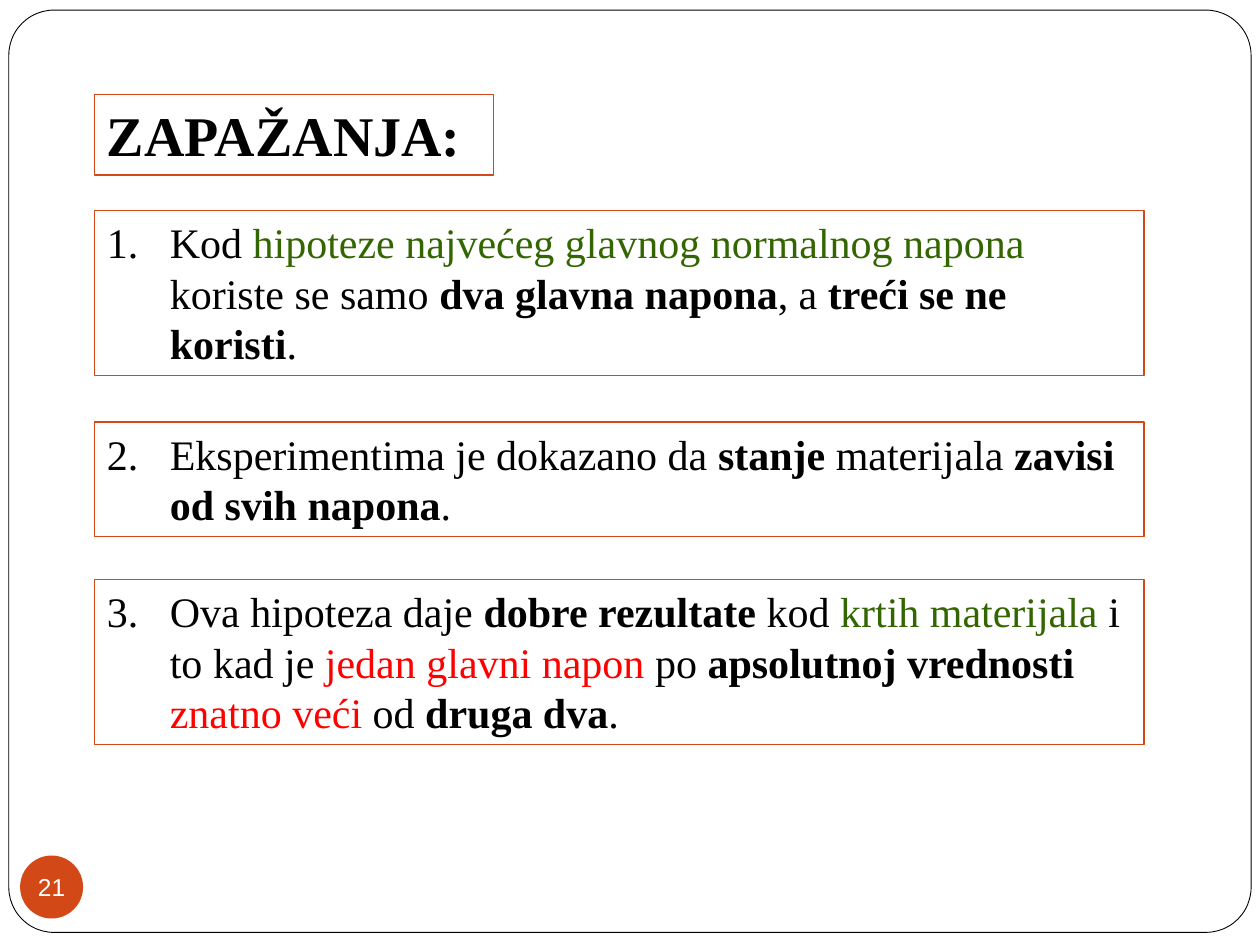
from pptx import Presentation
from pptx.dml.color import RGBColor
from pptx.enum.shapes import MSO_SHAPE
from pptx.enum.text import MSO_ANCHOR, MSO_AUTO_SIZE, PP_ALIGN
from pptx.oxml.ns import qn
from pptx.util import Inches, Pt
from lxml import etree

RECTANGLE, ROUNDED, OVAL = MSO_SHAPE.RECTANGLE, MSO_SHAPE.ROUNDED_RECTANGLE, MSO_SHAPE.OVAL
TOP, MIDDLE = MSO_ANCHOR.TOP, MSO_ANCHOR.MIDDLE
LEFT, CENTER = PP_ALIGN.LEFT, PP_ALIGN.CENTER
FIT_SHAPE = MSO_AUTO_SIZE.SHAPE_TO_FIT_TEXT

BLACK = RGBColor(0x00, 0x00, 0x00)
WHITE = RGBColor(0xFF, 0xFF, 0xFF)
ORANGE = RGBColor(0xD3, 0x48, 0x17)
GREEN = RGBColor(0x33, 0x66, 0x00)
RED = RGBColor(0xFF, 0x00, 0x00)

SERIF = "Times New Roman"
PLAIN = {"color": BLACK, "bold": False}
BOLD = {"color": BLACK, "bold": True}
GREEN_TEXT = {"color": GREEN, "bold": False}
RED_TEXT = {"color": RED, "bold": False}

BOX_LEFT, BOX_WIDTH = 0.75, 8.33
OBSERVATIONS = [
    (1.67, 1.31, [
        ("Kod ", PLAIN),
        ("hipoteze najvećeg glavnog normalnog napona ", GREEN_TEXT),
        ("koriste se samo ", PLAIN),
        ("dva glavna napona", BOLD),
        (", a ", PLAIN),
        ("treći se ne koristi", BOLD),
        (".", PLAIN),
    ]),
    (3.35, 0.91, [
        ("Eksperimentima je dokazano da ", PLAIN),
        ("stanje", BOLD),
        (" materijala ", PLAIN),
        ("zavisi od svih napona", BOLD),
        (".", PLAIN),
    ]),
    (4.6, 1.31, [
        ("Ova hipoteza daje ", PLAIN),
        ("dobre rezultate ", BOLD),
        ("kod ", PLAIN),
        ("krtih materijala ", GREEN_TEXT),
        ("i to kad je ", PLAIN),
        ("jedan glavni napon ", RED_TEXT),
        ("po ", PLAIN),
        ("apsolutnoj vrednosti ", BOLD),
        ("znatno veći ", RED_TEXT),
        ("od ", PLAIN),
        ("druga dva", BOLD),
        (".", PLAIN),
    ]),
]


def add_shape(slide, kind, box, fill=None, line=None, line_width=0.75):
    shape = slide.shapes.add_shape(kind, *(Inches(length) for length in box))
    shape.shadow.inherit = False
    if fill is None:
        shape.fill.background()
    else:
        shape.fill.solid()
        shape.fill.fore_color.rgb = fill
    if line is None:
        shape.line.fill.background()
    else:
        shape.line.color.rgb = line
        shape.line.width = Pt(line_width)
    return shape


def add_runs(paragraph, runs, size, font_name):
    for text, style in runs:
        run = paragraph.add_run()
        run.text = text
        formats = {"name": font_name, "size": Pt(size), "bold": style["bold"]}
        for name, value in formats.items():
            setattr(run.font, name, value)
        run.font.color.rgb = style["color"]


def number_paragraph(paragraph, number):
    """Give the paragraph a hanging automatic number."""
    properties = paragraph._p.get_or_add_pPr()
    indent = Inches(0.5)
    properties.set("marL", str(indent))
    properties.set("indent", str(-indent))
    numbering = etree.SubElement(properties, qn("a:buAutoNum"))
    numbering.set("type", "arabicPeriod")
    if number > 1:
        numbering.set("startAt", str(number))


def add_outlined_text(slide, box, runs, size, number=None):
    shape = add_shape(slide, RECTANGLE, box, line=ORANGE)
    frame = shape.text_frame
    formats = {"word_wrap": True, "vertical_anchor": TOP, "auto_size": FIT_SHAPE}
    for name, value in formats.items():
        setattr(frame, name, value)
    paragraph = frame.paragraphs[0]
    paragraph.alignment = LEFT
    if number is not None:
        number_paragraph(paragraph, number)
    add_runs(paragraph, runs, size, SERIF)


def add_frame(slide, box):
    frame = add_shape(slide, ROUNDED, box, fill=WHITE, line=BLACK, line_width=0.5)
    frame.adjustments[0] = 0.049


def add_page_badge(slide, box, number):
    badge = add_shape(slide, OVAL, box, fill=ORANGE)
    frame = badge.text_frame
    formats = {"margin_left": 0, "margin_top": 0, "margin_right": 0, "margin_bottom": 0,
               "word_wrap": False, "vertical_anchor": MIDDLE}
    for name, value in formats.items():
        setattr(frame, name, value)
    paragraph = frame.paragraphs[0]
    paragraph.alignment = CENTER
    add_runs(paragraph, [(number, {"color": WHITE, "bold": False})], 14, "Arial")


def main():
    presentation = Presentation()
    presentation.slide_width = Inches(10)
    presentation.slide_height = Inches(7.5)
    slide = presentation.slides.add_slide(presentation.slide_layouts[6])

    add_frame(slide, (0.07, 0.08, 9.86, 7.32))
    add_page_badge(slide, (0.16, 6.79, 0.5, 0.5), "21")
    add_outlined_text(slide, (BOX_LEFT, 0.75, 3.17, 0.64), [("ZAPAŽANJA:", BOLD)], 32)
    for number, (top, height, runs) in enumerate(OBSERVATIONS, start=1):
        add_outlined_text(slide, (BOX_LEFT, top, BOX_WIDTH, height), runs, 24, number)

    presentation.save("out.pptx")


if __name__ == "__main__":
    main()
